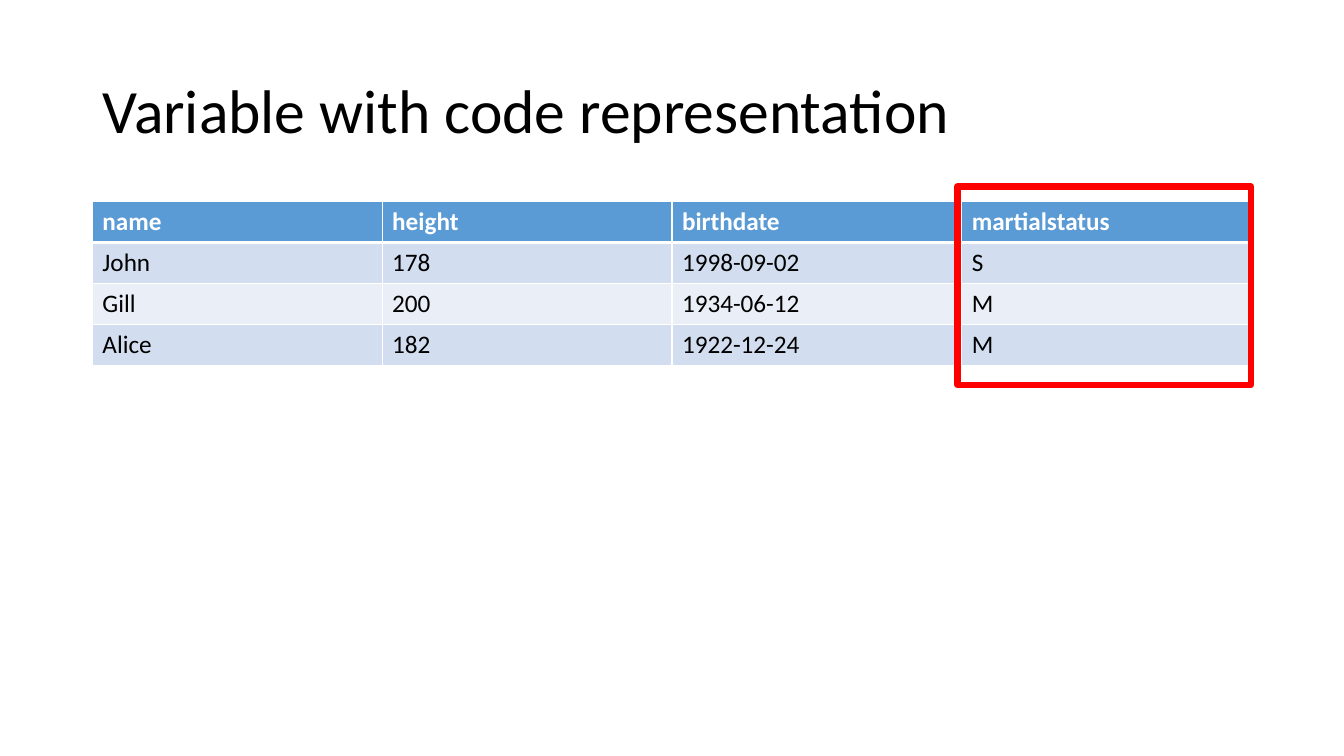
from dataclasses import dataclass
from lxml import etree
from pptx import Presentation
from pptx.dml.color import RGBColor
from pptx.enum.shapes import MSO_SHAPE
from pptx.enum.text import MSO_ANCHOR, PP_ALIGN
from pptx.oxml.ns import qn
from pptx.util import Pt

RECT = MSO_SHAPE.RECTANGLE
MIDDLE = MSO_ANCHOR.MIDDLE
LEFT = PP_ALIGN.LEFT


@dataclass(frozen=True)
class Theme:
    font: str = "Calibri"
    title: int = 44
    body: int = 18
    black: str = "000000"
    white: str = "FFFFFF"
    head: str = "5B9BD5"
    bands: tuple = ("D2DEEF", "EAEFF7")
    mark: str = "FF0000"


THEME = Theme()
ROWS = [
    ["name", "height", "birthdate", "martialstatus"],
    ["John", "178", "1998-09-02", "S"],
    ["Gill", "200", "1934-06-12", "M"],
    ["Alice", "182", "1922-12-24", "M"],
]


def place(shape, box):
    for name, value in zip(("left", "top", "width", "height"), box):
        setattr(shape, name, Pt(value))


def style(font, color, **values):
    for name, value in {"name": THEME.font, **values}.items():
        setattr(font, name, value)
    font.color.rgb = RGBColor.from_string(color)


def add_title(slide, box, text):
    title = slide.shapes.title
    place(title, box)
    frame = title.text_frame
    frame.text = text
    frame.vertical_anchor = MIDDLE
    para = frame.paragraphs[0]
    para.alignment = LEFT
    para.line_spacing = 0.9
    style(para.runs[0].font, THEME.black, size=Pt(THEME.title))


def add_edges(cell, widths):
    """Draw white cell borders; widths maps each side, in L R T B order, to points."""
    props = cell._tc.get_or_add_tcPr()
    for index, (side, width) in enumerate(widths.items()):
        line = etree.Element(qn(f"a:ln{side}"), w=str(Pt(width)))
        fill = etree.SubElement(line, qn("a:solidFill"))
        etree.SubElement(fill, qn("a:srgbClr"), val=THEME.white)
        props.insert(index, line)


def add_grid(slide, box, rows):
    count, cols = len(rows), len(rows[0])
    table = slide.shapes.add_table(count, cols, *map(Pt, box)).table
    for col in table.columns:
        col.width = Pt(box[2] / cols)
    for r, row in enumerate(rows):
        table.rows[r].height = Pt(box[3] / count)
        head = r == 0
        for c, text in enumerate(row):
            cell = table.cell(r, c)
            cell.text = text
            cell.fill.solid()
            tint = THEME.head if head else THEME.bands[(r - 1) % 2]
            cell.fill.fore_color.rgb = RGBColor.from_string(tint)
            add_edges(cell, {"L": 1, "R": 1, "T": 3 if r == 1 else 1,
                             "B": 3 if head else 1})
            style(cell.text_frame.paragraphs[0].runs[0].font,
                  THEME.white if head else THEME.black,
                  size=Pt(THEME.body), bold=head)


def add_mark(slide, box):
    frame = slide.shapes.add_shape(RECT, *map(Pt, box))
    frame.shadow.inherit = False
    frame.fill.background()
    frame.line.color.rgb = RGBColor.from_string(THEME.mark)
    frame.line.width = Pt(4.5)


def main():
    deck = Presentation()
    deck.slide_width, deck.slide_height = Pt(960), Pt(540)
    slide = deck.slides.add_slide(deck.slide_layouts[5])
    left, top, width, height = grid = (66, 144, 828, 116.8)
    add_title(slide, (left, 28.75, width, 104.4), "Variable with code representation")
    add_grid(slide, grid, ROWS)
    span = width / len(ROWS[0])
    add_mark(slide, (left + width - span - 3, top - 10.8, span + 2.5, height + 25))
    deck.save("out.pptx")


if __name__ == "__main__":
    main()
